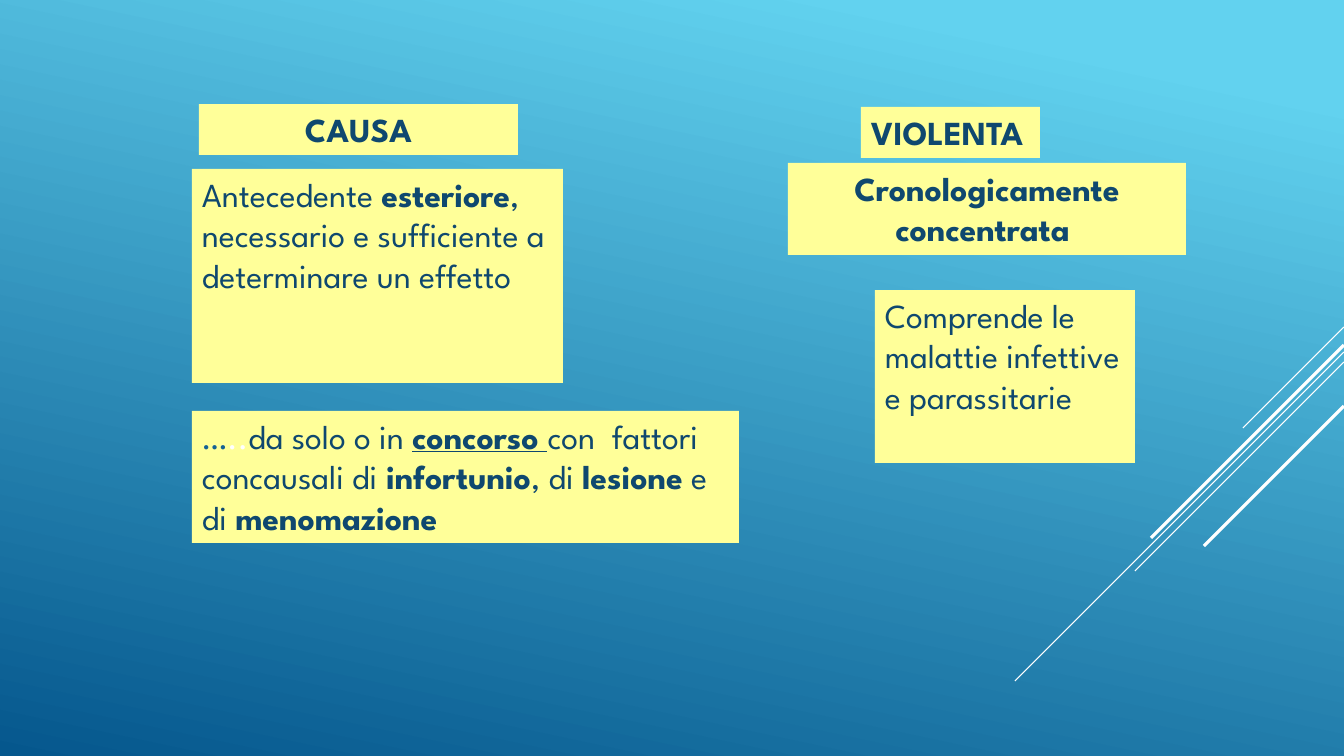
from pptx import Presentation
from pptx.dml.color import RGBColor
from pptx.enum.shapes import MSO_CONNECTOR, MSO_SHAPE
from pptx.enum.text import MSO_ANCHOR, MSO_AUTO_SIZE, PP_ALIGN
from pptx.oxml.ns import qn
from pptx.util import Pt
from lxml import etree

LINE = MSO_CONNECTOR.STRAIGHT
RECT = MSO_SHAPE.RECTANGLE
TOP = MSO_ANCHOR.TOP
GROW = MSO_AUTO_SIZE.SHAPE_TO_FIT_TEXT
LEFT, MID = PP_ALIGN.LEFT, PP_ALIGN.CENTER

SCALE = 914400 / 100.8
WIDE, HIGH = 1344, 756
FONT = "League Spartan"
HUES = {
    "sky": "62D2EF",
    "deep": "05578D",
    "note": "FFFF99",
    "ink": "0F486F",
    "dots": "146194",
    "white": "FFFFFF",
}


def px(count):
    return round(count * SCALE)


def hue(name):
    return RGBColor.from_string(HUES[name])


def paint(slide):
    fill = slide.background.fill
    fill.gradient()
    fill.gradient_angle = 258
    for stop, place, name in zip(fill.gradient_stops, (0.1, 1), ("sky", "deep")):
        stop.position = place
        stop.color.rgb = hue(name)


def stripes(slide, right, top):
    rows = ((0, 101, 0.75), (25, 329, 0.75), (35, 209, 0.75), (18, 193, 2.25), (79, 140, 2.25))
    for drop, reach, width in rows:
        start = top + drop
        ends = (right, start, right - reach, start + reach)
        line = slide.shapes.add_connector(LINE, *map(px, ends))
        line.line.color.rgb = hue("white")
        line.line.width = Pt(width)
        etree.SubElement(line._element.spPr, qn("a:effectLst"))


def note(slide, box, parts, align=LEFT):
    shape = slide.shapes.add_shape(RECT, *map(px, box))
    shape.shadow.inherit = False
    shape.fill.solid()
    shape.fill.fore_color.rgb = hue("note")
    shape.line.fill.background()
    frame = shape.text_frame
    frame.word_wrap = True
    frame.auto_size = GROW
    frame.vertical_anchor = TOP
    para = frame.paragraphs[0]
    para.alignment = align
    for text, style, name in parts:
        run = para.add_run()
        run.text = text
        font = run.font
        font.name = FONT
        font.size = Pt(24)
        font.bold = "b" in style
        font.underline = "u" in style
        font.color.rgb = hue(name)


def cause(slide, left, top):
    note(slide, (left + 7, top, 319, 51), [("CAUSA", "b", "ink")], MID)
    note(slide, (left, top + 65, 371, 214), [
        ("Antecedente ", "", "ink"),
        ("esteriore", "b", "ink"),
        (", necessario e sufficiente a determinare un effetto", "", "ink"),
    ])
    note(slide, (left, top + 307, 547, 132), [
        ("…", "", "dots"),
        ("..", "", "white"),
        ("da solo o in ", "", "ink"),
        ("concorso ", "bu", "ink"),
        ("con  fattori concausali di", "", "ink"),
        (" infortunio", "b", "ink"),
        (", di ", "", "ink"),
        ("lesione", "b", "ink"),
        (" e di ", "", "ink"),
        ("menomazione", "b", "ink"),
    ])


def violent(slide, left, top):
    note(slide, (left + 73, top, 179, 51), [("VIOLENTA", "b", "ink")])
    note(slide, (left, top + 56, 398, 92), [("Cronologicamente concentrata ", "b", "ink")], MID)
    note(slide, (left + 87, top + 183, 260, 173), [
        ("Comprende le malattie infettive e parassitarie", "", "ink"),
    ])


def main():
    deck = Presentation()
    deck.slide_width, deck.slide_height = px(WIDE), px(HIGH)
    slide = deck.slides.add_slide(deck.slide_layouts[6])
    paint(slide)
    stripes(slide, WIDE, 327)
    cause(slide, 192, 104)
    violent(slide, 788, 107)
    deck.save("out.pptx")


if __name__ == "__main__":
    main()
